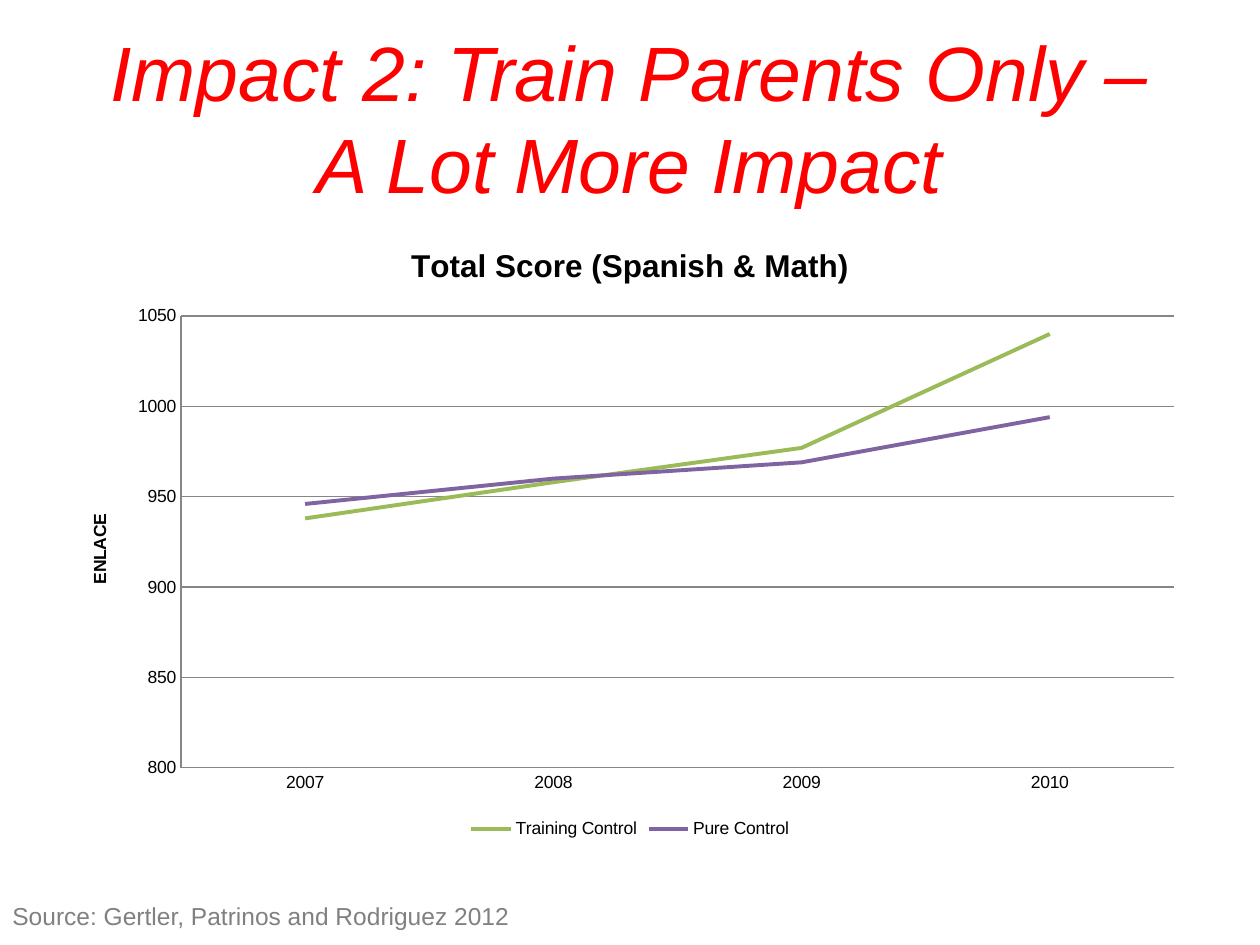
from dataclasses import dataclass

from lxml import etree
from pptx import Presentation
from pptx.chart.data import CategoryChartData
from pptx.dml.color import RGBColor
from pptx.enum.chart import XL_CHART_TYPE, XL_LEGEND_POSITION, XL_MARKER_STYLE, XL_TICK_MARK
from pptx.enum.text import MSO_ANCHOR, MSO_AUTO_SIZE, PP_ALIGN
from pptx.oxml import parse_xml
from pptx.util import Pt

LINE = XL_CHART_TYPE.LINE
LEGEND_BOTTOM = XL_LEGEND_POSITION.BOTTOM
NO_MARKER = XL_MARKER_STYLE.NONE
NO_TICK = XL_TICK_MARK.NONE
MIDDLE = MSO_ANCHOR.MIDDLE
NO_AUTOFIT = MSO_AUTO_SIZE.NONE
CENTER = PP_ALIGN.CENTER
CHART_NAMESPACE = "http://schemas.openxmlformats.org/drawingml/2006/chart"
PX = 914400 / 126


@dataclass(frozen=True)
class Theme:
    font: str = "Arial"
    red: str = "FF0000"
    black: str = "000000"
    gray: str = "808080"
    axis: str = "868686"
    green: str = "9BBB59"
    purple: str = "8064A2"
    title_size: int = 44
    chart_title_size: int = 18
    chart_size: int = 10
    source_size: int = 14


theme = Theme()


def px(*lengths):
    return [round(length * PX) for length in lengths]


def style(font, size, color, bold=False, italic=False):
    font.name = theme.font
    font.size = Pt(size)
    font.color.rgb = RGBColor.from_string(color)
    font.bold = bold
    font.italic = italic


deck = Presentation()
deck.slide_width, deck.slide_height = px(1260, 945)
page = deck.slides.add_slide(deck.slide_layouts[5])

title = page.shapes.title
title.left, title.top, title.width, title.height = px(63, 38, 1134, 158)
frame = title.text_frame
frame.text = "Impact 2: Train Parents Only –\vA Lot More Impact"
frame.auto_size = NO_AUTOFIT
frame.vertical_anchor = MIDDLE
para = frame.paragraphs[0]
para.alignment = CENTER
for span in para.runs:
    style(span.font, theme.title_size, theme.red, italic=True)

scores = CategoryChartData(number_format="General")
scores.categories = ["2007", "2008", "2009", "2010"]
scores.add_series("Training Control", [938, 958, 977, 1040])
scores.add_series("Pure Control", [946, 960, 969, 994])
chart = page.shapes.add_chart(LINE, *px(63, 220, 1134, 624), scores).chart
style(chart.font, theme.chart_size, theme.black)

chart.has_title = True
chart.chart_title.include_in_layout = False
value_axis = chart.value_axis
value_axis.has_title = True
for heading, words, size in (
    (chart.chart_title, "Total Score (Spanish & Math)", theme.chart_title_size),
    (value_axis.axis_title, "ENLACE", theme.chart_size),
):
    heading.text_frame.text = words
    style(heading.text_frame.paragraphs[0].runs[0].font, size, theme.black, bold=True)

value_axis.minimum_scale = 800
value_axis.maximum_scale = 1050
value_axis.major_unit = 50
value_axis.has_major_gridlines = True
for axis in (chart.category_axis, value_axis):
    axis.major_tick_mark = NO_TICK
    axis.minor_tick_mark = NO_TICK
for ruled in (chart.category_axis, value_axis, value_axis.major_gridlines):
    ruled.format.line.color.rgb = RGBColor.from_string(theme.axis)
    ruled.format.line.width = Pt(0.75)

chart.has_legend = True
chart.legend.position = LEGEND_BOTTOM
chart.legend.include_in_layout = False
for series, color in zip(chart.plots[0].series, (theme.green, theme.purple)):
    series.smooth = False
    series.marker.style = NO_MARKER
    series.format.line.color.rgb = RGBColor.from_string(color)
    series.format.line.width = Pt(2.25)
chart.plots[0].vary_by_categories = False

plot_area = chart.plots[0]._element.getparent()
for layout in plot_area.findall(f"{{{CHART_NAMESPACE}}}layout"):
    plot_area.remove(layout)
layout = parse_xml(f'<c:layout xmlns:c="{CHART_NAMESPACE}"/>')
manual = etree.SubElement(layout, f"{{{CHART_NAMESPACE}}}manualLayout")
for tag, setting in (
    ("layoutTarget", "inner"),
    ("xMode", "edge"),
    ("yMode", "edge"),
    ("x", 118 / 1134),
    ("y", 96 / 624),
    ("w", 993 / 1134),
    ("h", 452 / 624),
):
    etree.SubElement(manual, f"{{{CHART_NAMESPACE}}}{tag}", val=str(setting))
plot_area.insert(0, layout)

source = page.shapes.add_textbox(*px(0, 895, 850, 43))
source.text_frame.word_wrap = True
source.text_frame.text = "Source: Gertler, Patrinos and Rodriguez 2012"
style(source.text_frame.paragraphs[0].runs[0].font, theme.source_size, theme.gray)

deck.save("out.pptx")
